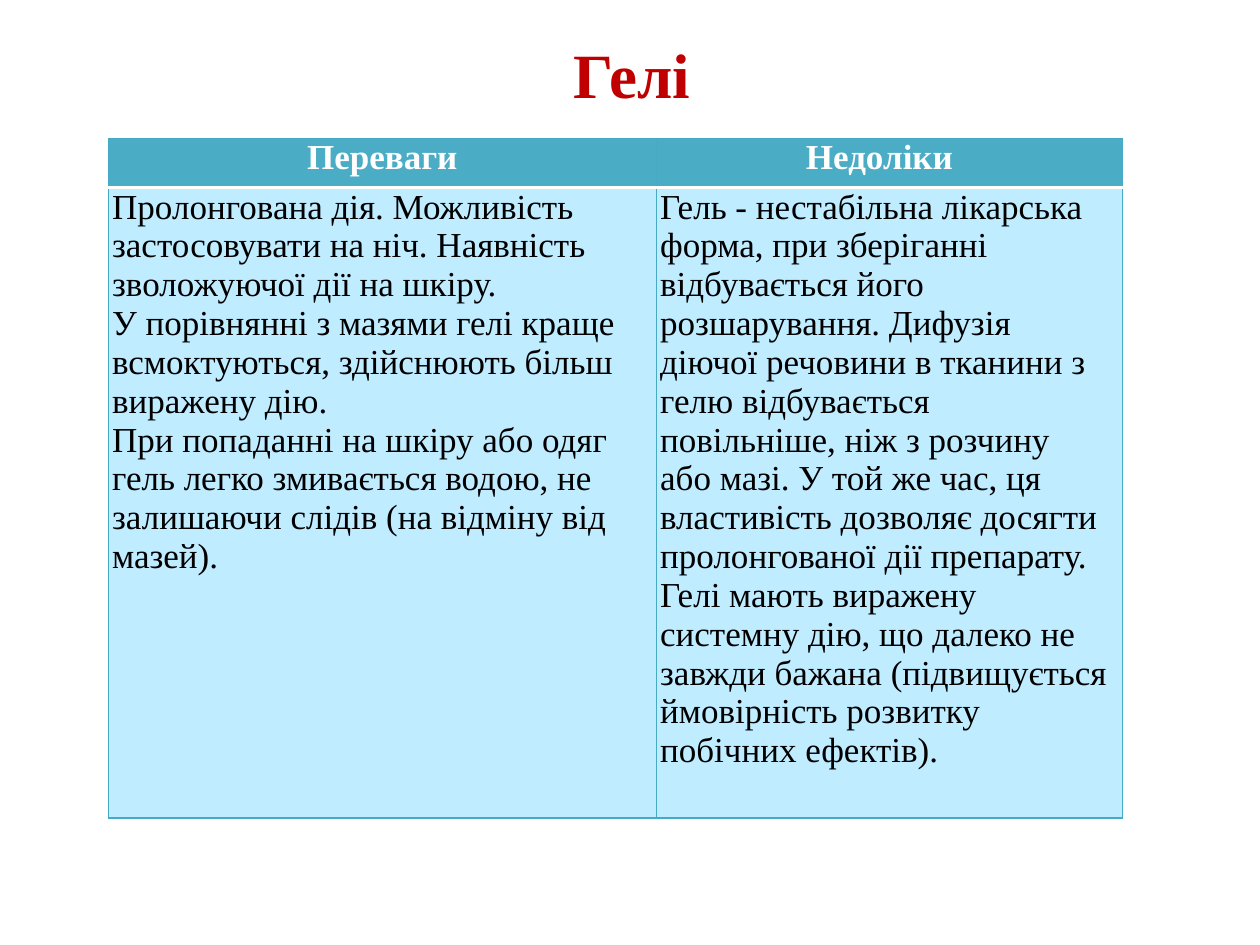
from lxml import etree
from pptx import Presentation
from pptx.dml.color import RGBColor
from pptx.enum.text import MSO_ANCHOR, MSO_AUTO_SIZE, PP_ALIGN
from pptx.oxml.ns import qn
from pptx.util import Inches, Pt

# Content
TITLE = "Гелі"
HEADERS = ["Переваги", "Недоліки "]
ADVANTAGES = [
    "Пролонгована дія. Можливість застосовувати на ніч. Наявність зволожуючої дії на шкіру.",
    "У порівнянні з мазями гелі краще всмоктуються, здійснюють більш виражену дію.",
    "При попаданні на шкіру або одяг гель легко змивається водою, не залишаючи слідів "
    "(на відміну від мазей).",
]
DRAWBACKS = [
    "Гель - нестабільна лікарська форма, при зберіганні відбувається його розшарування. "
    "Дифузія діючої речовини в тканини з гелю відбувається повільніше, ніж з розчину або мазі. "
    "У той же час, ця властивість дозволяє досягти пролонгованої дії препарату. "
    "Гелі мають виражену системну дію, що далеко не завжди бажана "
    "(підвищується ймовірність розвитку побічних ефектів).",
]
ROWS = [[[header] for header in HEADERS], [ADVANTAGES, DRAWBACKS]]

# Layout and formats
COLUMN_WIDTHS = [4.35, 3.7]
RIGHT_MARGINS = [0.03, 0.12]
ROW_HEIGHTS = [0.39, 4.3]  # the second row grows to fit its text
TABLE_LEFT, TABLE_TOP = 0.86, 1.1
TITLE_BOX = (4.45, 0.23, 1.13, 0.71)
TITLE_FONT = {"size": Pt(36), "bold": True, "name": "Times New Roman"}
GRID_LINE, HEADER_LINE = ("46AAC5", 0.75), ("FFFFFF", 2)
ROW_STYLES = [
    {"fill": "4BACC6", "color": "FFFFFF", "align": PP_ALIGN.CENTER, "bold": True,
     "edges": {"B": HEADER_LINE}},
    {"fill": "C0ECFF", "color": "000000", "align": PP_ALIGN.LEFT, "bold": False,
     "edges": {"T": HEADER_LINE}},
]
CELL_FORMAT = {"margin_left": Inches(0.03), "margin_top": 0, "margin_bottom": 0,
               "vertical_anchor": MSO_ANCHOR.TOP}


def rgb(value):
    return RGBColor.from_string(value)


def set_attributes(target, values):
    for key, value in values.items():
        setattr(target, key, value)


def set_font(font, color, values):
    set_attributes(font, values)
    font.color.rgb = rgb(color)


def set_borders(cell, edges):
    properties = cell._tc.get_or_add_tcPr()
    for position, side in enumerate("LRTB"):
        color, width = edges.get(side, GRID_LINE)
        line = etree.Element(qn(f"a:ln{side}"), w=str(Pt(width)))
        solid = etree.SubElement(line, qn("a:solidFill"))
        etree.SubElement(solid, qn("a:srgbClr"), val=color)
        properties.insert(position, line)


def fill_cell(cell, paragraphs, right_margin, style):
    set_attributes(cell, CELL_FORMAT)
    cell.margin_right = Inches(right_margin)
    cell.fill.solid()
    cell.fill.fore_color.rgb = rgb(style["fill"])
    set_borders(cell, style["edges"])
    cell.text = "\n".join(paragraphs)
    for paragraph in cell.text_frame.paragraphs:
        paragraph.alignment = style["align"]
        set_font(paragraph.runs[0].font, style["color"],
                 {"size": Pt(20), "bold": style["bold"], "name": "Times New Roman"})


def main():
    deck = Presentation()
    deck.slide_width, deck.slide_height = Inches(10), Inches(7.5)
    slide = deck.slides.add_slide(deck.slide_layouts[5])

    # Title
    title = slide.shapes.title
    title.left, title.top, title.width, title.height = map(Inches, TITLE_BOX)
    title.text = TITLE
    set_attributes(title.text_frame, {"word_wrap": False,
                                      "auto_size": MSO_AUTO_SIZE.SHAPE_TO_FIT_TEXT})
    heading = title.text_frame.paragraphs[0]
    heading.alignment = PP_ALIGN.CENTER
    set_font(heading.runs[0].font, "C00000", TITLE_FONT)

    # Comparison table
    table = slide.shapes.add_table(
        len(ROWS), len(HEADERS), Inches(TABLE_LEFT), Inches(TABLE_TOP),
        Inches(sum(COLUMN_WIDTHS)), Inches(sum(ROW_HEIGHTS))).table
    for column, width in zip(table.columns, COLUMN_WIDTHS):
        column.width = Inches(width)
    for row, height, contents, style in zip(table.rows, ROW_HEIGHTS, ROWS, ROW_STYLES):
        row.height = Inches(height)
        for cell, paragraphs, right_margin in zip(row.cells, contents, RIGHT_MARGINS):
            fill_cell(cell, paragraphs, right_margin, style)

    deck.save("out.pptx")


if __name__ == "__main__":
    main()
